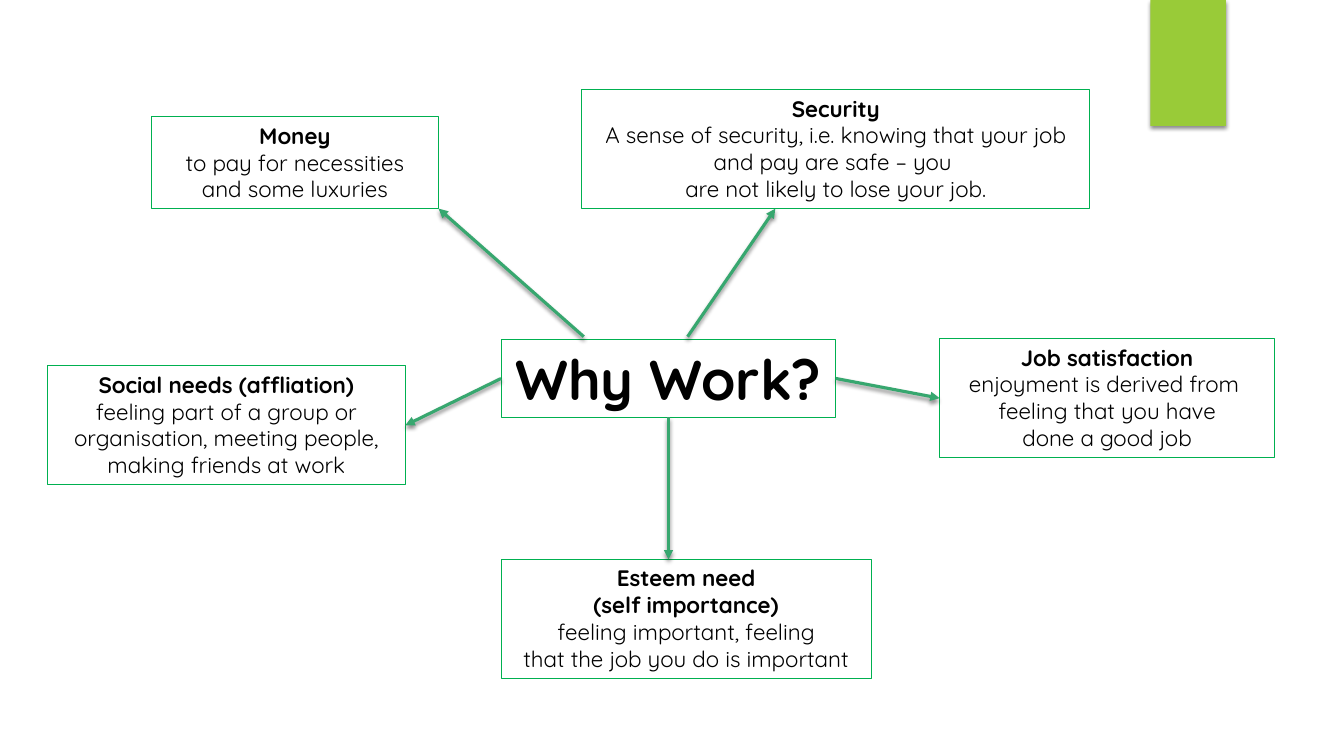
import pptx
import pptx.dml.color
import pptx.enum.shapes
import pptx.enum.text
import pptx.oxml
import pptx.oxml.ns
import pptx.util

Inches = pptx.util.Inches
Pt = pptx.util.Pt
RGBColor = pptx.dml.color.RGBColor
AutoSize = pptx.enum.text.MSO_AUTO_SIZE

BLACK = RGBColor(0x00, 0x00, 0x00)
LIME = RGBColor(0x99, 0xCB, 0x38)
BORDER_GREEN = RGBColor(0x00, 0xB0, 0x50)
ARROW_GREEN = RGBColor(0x37, 0xA7, 0x6F)
TOP, LEFT, BOTTOM, RIGHT = range(4)

NAMESPACE = pptx.oxml.ns.nsdecls("a")
SHADOW = (
    f'<a:effectLst {NAMESPACE}><a:outerShdw blurRad="38100" dist="25400" dir="5400000" '
    'rotWithShape="0"><a:srgbClr val="000000"><a:alpha val="45000"/></a:srgbClr>'
    "</a:outerShdw></a:effectLst>"
)
ARROWHEAD = f'<a:tailEnd {NAMESPACE} type="triangle"/>'


class MindMap:
    """Draws boxes and arrows in one style on the current slide."""

    font_name = "Quicksand"

    def __init__(self, presentation):
        self.slide = presentation.slides.add_slide(presentation.slide_layouts[5])

    def add_shadow(self, shape):
        shape._element.spPr.append(pptx.oxml.parse_xml(SHADOW))

    def bar(self, left, top, width, height):
        shape = self.slide.shapes.add_shape(
            pptx.enum.shapes.MSO_SHAPE.RECTANGLE,
            Inches(left), Inches(top), Inches(width), Inches(height))
        shape.fill.solid()
        shape.fill.fore_color.rgb = LIME
        shape.line.fill.background()
        self.add_shadow(shape)

    def format_box(self, shape, lines, size, bold_lines, auto_size):
        shape.line.color.rgb = BORDER_GREEN
        shape.line.width = Pt(0.75)
        text_frame = shape.text_frame
        text_frame.text = "\n".join(lines)
        text_frame.word_wrap = True
        text_frame.auto_size = auto_size
        text_frame.vertical_anchor = pptx.enum.text.MSO_ANCHOR.TOP
        for index, paragraph in enumerate(text_frame.paragraphs):
            paragraph.alignment = pptx.enum.text.PP_ALIGN.CENTER
            for run in paragraph.runs:
                run.font.name = self.font_name
                run.font.size = Pt(size)
                run.font.bold = index < bold_lines
                run.font.color.rgb = BLACK

    def title(self, left, top, width, height, text):
        shape = self.slide.shapes.title
        shape.left, shape.top = Inches(left), Inches(top)
        shape.width, shape.height = Inches(width), Inches(height)
        self.format_box(shape, [text], 40, 1, AutoSize.NONE)
        return shape

    def box(self, left, top, width, height, lines, bold_lines=1):
        shape = self.slide.shapes.add_textbox(
            Inches(left), Inches(top), Inches(width), Inches(height))
        self.format_box(shape, lines, 16, bold_lines, AutoSize.SHAPE_TO_FIT_TEXT)
        return shape

    def arrow(self, start, end, begin_joint=None, end_joint=None):
        connector = self.slide.shapes.add_connector(
            pptx.enum.shapes.MSO_CONNECTOR.STRAIGHT,
            *(Inches(value) for value in start + end))
        if begin_joint:
            connector.begin_connect(*begin_joint)
        if end_joint:
            connector.end_connect(*end_joint)
        connector.line.color.rgb = ARROW_GREEN
        connector.line.width = Pt(2.25)
        connector.line._get_or_add_ln().append(pptx.oxml.parse_xml(ARROWHEAD))
        self.add_shadow(connector)


def main():
    presentation = pptx.Presentation()
    presentation.slide_width = Inches(13.33)
    presentation.slide_height = Inches(7.5)
    mind_map = MindMap(presentation)

    mind_map.bar(11.41, 0, 0.75, 1.25)
    question = mind_map.title(4.97, 3.37, 3.32, 0.77, "Why Work?")
    mind_map.box(1.5, 1.16, 2.85, 0.91, [
        "Money", "to pay for necessities", "and some luxuries"])
    mind_map.box(5.77, 0.89, 5.04, 1.18, [
        "Security",
        "A sense of security, i.e. knowing that your job and pay are safe – you ",
        "are not likely to lose your job."])
    social = mind_map.box(0.47, 3.63, 3.55, 1.18, [
        "Social needs (affliation)", "feeling part of a group or",
        "organisation, meeting people,", "making friends at work"])
    mind_map.box(4.97, 5.55, 3.67, 1.18, [
        "Esteem need", "(self importance)", "feeling important, feeling",
        "that the job you do is important"], bold_lines=2)
    satisfaction = mind_map.box(9.32, 3.36, 3.32, 1.18, [
        "Job satisfaction", "enjoyment is derived from ",
        "feeling that you have", "done a good job"])

    mind_map.arrow((4.97, 3.79), (4.02, 4.18), (question, LEFT), (social, RIGHT))
    mind_map.arrow((6.82, 3.34), (7.69, 2.07))
    mind_map.arrow((5.79, 3.34), (4.35, 2.07))
    mind_map.arrow((8.29, 3.76), (9.32, 3.95), (question, RIGHT), (satisfaction, LEFT))
    mind_map.arrow((6.63, 4.15), (6.63, 5.55), (question, BOTTOM))

    presentation.save("out.pptx")


if __name__ == "__main__":
    main()
